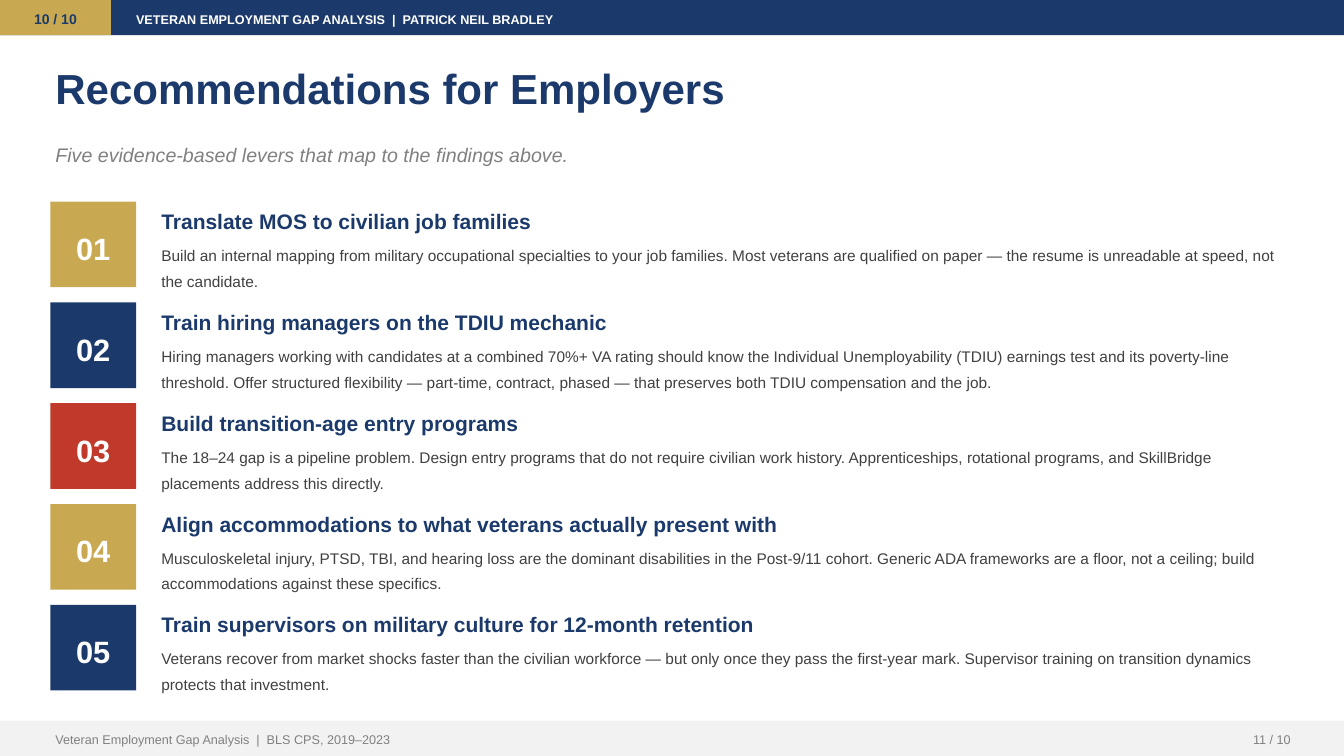
from pptx import Presentation
from pptx.dml.color import RGBColor
from pptx.enum.shapes import MSO_SHAPE
from pptx.enum.text import MSO_ANCHOR, MSO_AUTO_SIZE, PP_ALIGN
from pptx.util import Inches, Pt

NAVY = RGBColor(0x1B, 0x3A, 0x6B)
GOLD = RGBColor(0xC8, 0xA9, 0x51)
RED = RGBColor(0xC0, 0x39, 0x2B)
WHITE = RGBColor(0xFF, 0xFF, 0xFF)
GRAY = RGBColor(0x80, 0x80, 0x80)
CHARCOAL = RGBColor(0x40, 0x40, 0x40)
PALE = RGBColor(0xF2, 0xF2, 0xF2)

CELL = Inches(0.05)
COLUMNS, ROWS = 266.6, 150
MARGIN = 10
BAR_ROWS = 7
FOOTER_TOP = ROWS - BAR_ROWS
LEVER_TOP, LEVER_STEP = 40, 20
BADGE = 17
LEVER_LEFT, LEVER_COLUMNS = 31, 226
HEADING_ROWS, DETAIL_ROWS = 7, 13

LEVERS = [
    (GOLD, "Translate MOS to civilian job families",
     "Build an internal mapping from military occupational specialties to your job "
     "families. Most veterans are qualified on paper — the resume is unreadable at "
     "speed, not the candidate."),
    (NAVY, "Train hiring managers on the TDIU mechanic",
     "Hiring managers working with candidates at a combined 70%+ VA rating should know "
     "the Individual Unemployability (TDIU) earnings test and its poverty-line threshold. "
     "Offer structured flexibility — part-time, contract, phased — that preserves both "
     "TDIU compensation and the job."),
    (RED, "Build transition-age entry programs",
     "The 18–24 gap is a pipeline problem. Design entry programs that do not require "
     "civilian work history. Apprenticeships, rotational programs, and SkillBridge "
     "placements address this directly."),
    (GOLD, "Align accommodations to what veterans actually present with",
     "Musculoskeletal injury, PTSD, TBI, and hearing loss are the dominant disabilities "
     "in the Post-9/11 cohort. Generic ADA frameworks are a floor, not a ceiling; build "
     "accommodations against these specifics."),
    (NAVY, "Train supervisors on military culture for 12-month retention",
     "Veterans recover from market shocks faster than the civilian workforce — but only "
     "once they pass the first-year mark. Supervisor training on transition dynamics "
     "protects that investment."),
]


def on_grid(*cells):
    return [round(cell * CELL) for cell in cells]


def write(frame, words, size, color, bold=False, italic=False,
          align=PP_ALIGN.LEFT, anchor=MSO_ANCHOR.TOP, spacing=1.2):
    frame.word_wrap = True
    frame.vertical_anchor = anchor
    frame.margin_left = frame.margin_right = Inches(0.05)
    frame.margin_top = frame.margin_bottom = Inches(0.02)
    paragraph = frame.paragraphs[0]
    paragraph.text = words
    paragraph.alignment = align
    paragraph.line_spacing = spacing
    font = paragraph.font
    font.name = "Arial"
    font.size = Pt(size)
    font.bold = bold
    font.italic = italic
    font.color.rgb = color


def add_block(slide, place, color):
    block = slide.shapes.add_shape(MSO_SHAPE.RECTANGLE, *on_grid(*place))
    block.shadow.inherit = False
    block.fill.solid()
    block.fill.fore_color.rgb = color
    block.line.fill.background()
    return block


def add_label(slide, place, words, size, color, **style):
    frame = slide.shapes.add_textbox(*on_grid(*place)).text_frame
    write(frame, words, size, color, **style)
    frame.auto_size = MSO_AUTO_SIZE.SHAPE_TO_FIT_TEXT


def add_badge(slide, place, color, words, size, ink):
    badge = add_block(slide, place, color)
    write(badge.text_frame, words, size, ink, bold=True,
          align=PP_ALIGN.CENTER, anchor=MSO_ANCHOR.MIDDLE)


def add_header(slide):
    add_block(slide, (0, 0, COLUMNS, BAR_ROWS), NAVY)
    add_badge(slide, (0, 0, 22, BAR_ROWS), GOLD, "10 / 10", 10, NAVY)
    add_label(slide, (26, 0, 220, BAR_ROWS),
              "VETERAN EMPLOYMENT GAP ANALYSIS  |  PATRICK NEIL BRADLEY",
              9, WHITE, bold=True, anchor=MSO_ANCHOR.MIDDLE)


def add_title(slide):
    add_label(slide, (MARGIN, 11, 246, 18), "Recommendations for Employers",
              30, NAVY, bold=True, spacing=1.1)
    add_label(slide, (MARGIN, 27, 246, 10),
              "Five evidence-based levers that map to the findings above.",
              14, GRAY, italic=True)


def add_lever(slide, index, color, heading, detail):
    top = LEVER_TOP + index * LEVER_STEP
    add_badge(slide, (MARGIN, top, BADGE, BADGE), color, f"{index + 1:02d}", 22, WHITE)
    add_label(slide, (LEVER_LEFT, top, LEVER_COLUMNS, HEADING_ROWS),
              heading, 15, NAVY, bold=True)
    add_label(slide, (LEVER_LEFT, top + HEADING_ROWS, LEVER_COLUMNS, DETAIL_ROWS),
              detail, 11, CHARCOAL, spacing=1.4)


def add_footer(slide):
    add_block(slide, (0, FOOTER_TOP, COLUMNS, BAR_ROWS), PALE)
    add_label(slide, (MARGIN, FOOTER_TOP, 160, BAR_ROWS),
              "Veteran Employment Gap Analysis  |  BLS CPS, 2019–2023",
              9, GRAY, anchor=MSO_ANCHOR.MIDDLE)
    add_label(slide, (234, FOOTER_TOP, 23, BAR_ROWS), "11 / 10", 9, GRAY,
              align=PP_ALIGN.RIGHT, anchor=MSO_ANCHOR.MIDDLE)


def main():
    deck = Presentation()
    deck.slide_width, deck.slide_height = on_grid(COLUMNS, ROWS)
    slide = deck.slides.add_slide(deck.slide_layouts[6])
    slide.background.fill.solid()
    slide.background.fill.fore_color.rgb = WHITE
    add_header(slide)
    add_title(slide)
    for index, lever in enumerate(LEVERS):
        add_lever(slide, index, *lever)
    add_footer(slide)
    deck.save("out.pptx")


if __name__ == "__main__":
    main()
